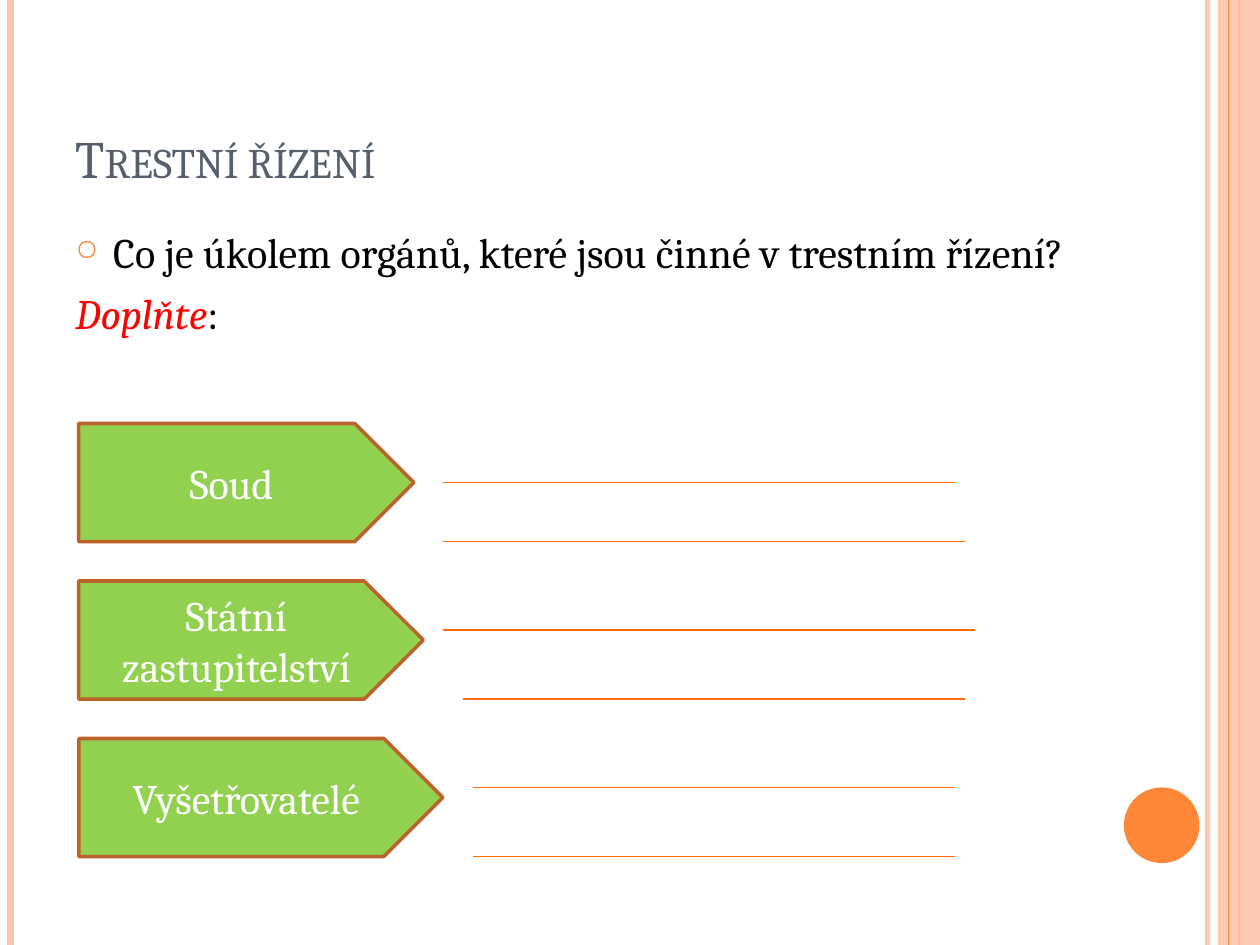
from pptx import Presentation
from pptx.dml.color import RGBColor
from pptx.enum.shapes import MSO_CONNECTOR as Connector, MSO_SHAPE as Shape
from pptx.enum.text import MSO_ANCHOR as Anchor, PP_ALIGN as Align
from pptx.oxml.ns import qn
from pptx.util import Pt
from lxml.etree import SubElement

# Content
TITLE = "Trestní řízení"
QUESTION = "Co je úkolem orgánů, které jsou činné v trestním řízení?"
PROMPT = ("Doplňte", ":")
# label, arrow width, answer lines as (start x, end x, offset from arrow top)
AUTHORITIES = [
    ("Soud", 191.5, [(253.4, 545.7, 33.75), (253.4, 551.4, 67.5)]),
    ("Státní\nzastupitelství", 196.9, [(253.4, 556.9, 28), (264.4, 551.4, 67.5)]),
    ("Vyšetřovatelé", 208.1, [(270, 545.7, 28), (270, 545.7, 67.5)]),
]

THEME = {
    "font": "Cambria", "title_size": 30, "body_size": 24,
    "title": "575F6D", "text": "000000", "prompt": "FF0000", "label": "FFFFFF",
    "accent": "FE8637", "pale": "FEC3AE",
    "arrow": "92D050", "arrow_line": "BC6329", "answer": "FF6B0A",
}
WIDTH, HEIGHT = 720, 540
ARROW_LEFT, ARROW_TOP, ARROW_HEIGHT, ARROW_STEP = 45, 242, 67.5, 90
TEXT_LEFT, TEXT_WIDTH = 36, 588

presentation = Presentation()
presentation.slide_width, presentation.slide_height = Pt(WIDTH), Pt(HEIGHT)
slide = presentation.slides.add_slide(presentation.slide_layouts[6])


def color(name):
    return RGBColor.from_string(THEME[name])


def set_alpha(fill_format_parent, percent):
    rgb = next(fill_format_parent.iter(qn("a:srgbClr")))
    SubElement(rgb, qn("a:alpha")).set("val", str(percent * 1000))


def add_line(start, end, color_name, weight):
    line = slide.shapes.add_connector(Connector.STRAIGHT, *map(Pt, start + end))
    line.line.color.rgb = color(color_name)
    line.line.width = Pt(weight)
    SubElement(line._element.spPr, qn("a:effectLst"))
    return line


def add_shape(kind, left, top, width, height, fill):
    shape = slide.shapes.add_shape(kind, *map(Pt, (left, top, width, height)))
    shape.shadow.inherit = False
    shape.fill.solid()
    shape.fill.fore_color.rgb = color(fill)
    shape.line.fill.background()
    return shape


def add_text_frame(top, height):
    box = slide.shapes.add_textbox(*map(Pt, (TEXT_LEFT, top, TEXT_WIDTH, height)))
    box.text_frame.word_wrap = True
    return box.text_frame


def style_run(run, size, color_name):
    run.font.name = THEME["font"]
    run.font.size = Pt(THEME[size])
    run.font.color.rgb = color(color_name)


def add_bullet(paragraph):
    properties = paragraph._p.get_or_add_pPr()
    bullet_color = SubElement(properties, qn("a:buClr"))
    SubElement(bullet_color, qn("a:srgbClr")).set("val", THEME["accent"])
    SubElement(properties, qn("a:buSzPct")).set("val", "70000")
    SubElement(properties, qn("a:buChar")).set("char", "○")


# Edge decoration
def add_edge_line(x, color_name, weight):
    return add_line((x, 0), (x, HEIGHT), color_name, weight)


set_alpha(add_edge_line(690, "pale", 3)._element, 93)
add_edge_line(6, "pale", 4.5)
add_edge_line(708, "accent", 1.5)
band = add_shape(Shape.RECTANGLE, 696, 0, 24, HEIGHT, "pale")
set_alpha(band._element, 87)
add_edge_line(702, "accent", 0.75)
add_shape(Shape.OVAL, 642.25, 450, 43.2, 43.2, "accent")

# Title
title_frame = add_text_frame(21.6, 90)
title_frame.vertical_anchor = Anchor.BOTTOM
title_frame.text = TITLE
title_run = title_frame.paragraphs[0].runs[0]
style_run(title_run, "title_size", "title")
title_run._r.get_or_add_rPr().set("cap", "small")

# Question and prompt
body_frame = add_text_frame(126, 384)
body_frame.text = QUESTION
question = body_frame.paragraphs[0]
prompt = body_frame.add_paragraph()
for part in PROMPT:
    prompt.add_run().text = part
for paragraph in (question, prompt):
    paragraph.space_before = Pt(6)
    properties = paragraph._p.get_or_add_pPr()
    properties.set("marL", str(Pt(21.6)))
    properties.set("indent", str(Pt(-21.6)))
    for run in paragraph.runs:
        style_run(run, "body_size", "text")
add_bullet(question)
prompt.runs[0].font.color.rgb = color("prompt")
prompt.runs[0].font.italic = True

# Authorities with lines for the answers
for row, (label, width, answer_lines) in enumerate(AUTHORITIES):
    top = ARROW_TOP + row * ARROW_STEP
    arrow = add_shape(Shape.PENTAGON, ARROW_LEFT, top, width, ARROW_HEIGHT, "arrow")
    arrow.line.color.rgb = color("arrow_line")
    arrow.line.width = Pt(2)
    arrow.text_frame.word_wrap = True
    arrow.text_frame.vertical_anchor = Anchor.MIDDLE
    arrow.text_frame.text = label
    for paragraph in arrow.text_frame.paragraphs:
        paragraph.alignment = Align.CENTER
        style_run(paragraph.runs[0], "body_size", "label")
    for start_x, end_x, offset in answer_lines:
        add_line((start_x, top + offset), (end_x, top + offset), "answer", 1)

presentation.save("out.pptx")
